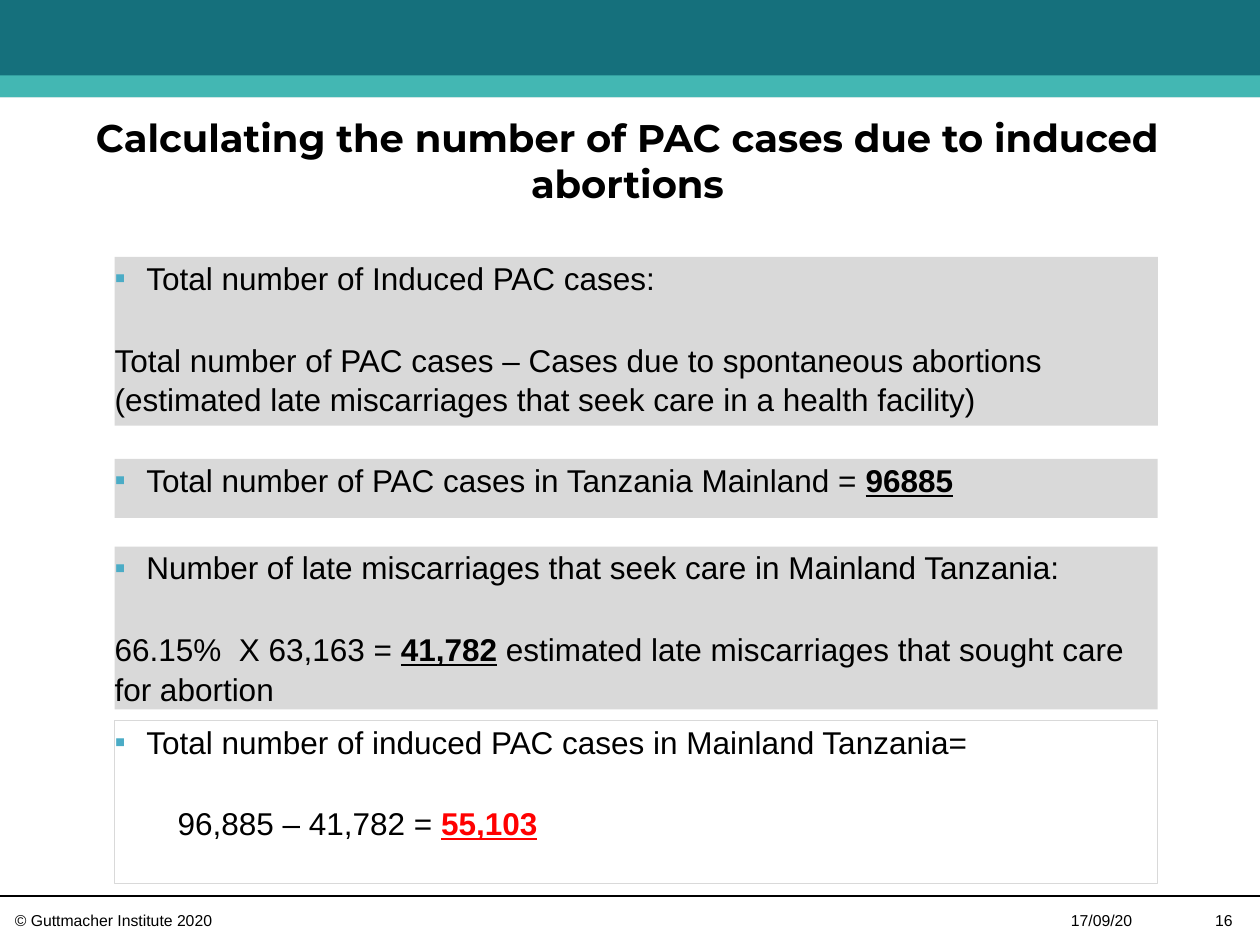
from pptx import Presentation
from pptx.dml.color import RGBColor
from pptx.enum.shapes import MSO_CONNECTOR, MSO_SHAPE
from pptx.enum.text import MSO_ANCHOR, MSO_AUTO_SIZE, PP_ALIGN
from pptx.oxml.ns import qn
from pptx.util import Cm, Pt
from lxml.etree import SubElement

INK = {"black": "000000", "red": "FF0000", "grey": "D9D9D9",
       "dark": "15707C", "light": "43B7B3", "mark": "4BACC6"}
TITLE = "Calculating the number of PAC cases due to induced abortions"
CARDS = [
    {"top": 5.18, "high": 3.4, "full": True, "indent": 0,
     "head": ["Total number of Induced PAC cases:"],
     "body": ["Total number of PAC cases – Cases due to spontaneous abortions "
              "(estimated late miscarriages that seek care in a health facility)"]},
    {"top": 9.25, "high": 1.19, "full": True, "indent": 0,
     "head": ["Total number of PAC cases in Tanzania Mainland = ", ("96885", "black")],
     "body": []},
    {"top": 11.02, "high": 3.28, "full": True, "indent": 0,
     "head": ["Number of late miscarriages that seek care in Mainland Tanzania:"],
     "body": ["66.15%  X 63,163 = ", ("41,782", "black"),
              " estimated late miscarriages that sought care for abortion"]},
    {"top": 14.53, "high": 3.28, "full": False, "indent": 1.27,
     "head": ["Total number of induced PAC cases in Mainland Tanzania="],
     "body": ["96,885 – 41,782 = ", ("55,103", "red")]},
]
BANDS = [(0, 1.96, "dark"), (1.52, 0.44, "light")]
NOTES = [
    ("© Guttmacher Institute 2020", 0.3, 5.2, PP_ALIGN.LEFT),
    ("17/09/20", 21.59, 1.8, PP_ALIGN.LEFT),
    ("16", 23.6, 1.25, PP_ALIGN.RIGHT),
]
WIDE, TALL = 25.4, 19.05
LEFT, SPAN = 2.31, 21.03


def tint(name):
    return RGBColor.from_string(INK[name])


def style(para, size, face="Arial", bold=None):
    font = para.font
    font.name, font.size, font.bold = face, Pt(size), bold
    font.color.rgb = tint("black")


def place(shape, left, top, wide, high):
    shape.left, shape.top = Cm(left), Cm(top)
    shape.width, shape.height = Cm(wide), Cm(high)


def setup(frame, anchor=MSO_ANCHOR.TOP):
    frame.word_wrap = True
    frame.auto_size = MSO_AUTO_SIZE.NONE
    frame.vertical_anchor = anchor
    frame.margin_left = frame.margin_right = 0
    frame.margin_top = frame.margin_bottom = 0


def write(para, parts, gap, indent, mark=False):
    props = para._p.get_or_add_pPr()
    props.set("marL", str(Cm(0.64 if mark else indent)))
    props.set("indent", str(Cm(-0.64 if mark else 0)))
    if mark:
        color = SubElement(props, qn("a:buClr"))
        SubElement(color, qn("a:srgbClr"), val=INK["mark"])
        SubElement(props, qn("a:buFont"), typeface="Arial")
        SubElement(props, qn("a:buChar"), char="▪")
    else:
        SubElement(props, qn("a:buNone"))
    para.alignment = PP_ALIGN.LEFT
    para.space_before = Pt(gap)
    para.line_spacing = 1.05
    style(para, 18)
    for part in parts:
        run = para.add_run()
        if isinstance(part, str):
            run.text = part
        else:
            run.text, color = part
            run.font.bold = run.font.underline = True
            run.font.color.rgb = tint(color)


def block(slide, top, high):
    shape = slide.shapes.add_shape(
        MSO_SHAPE.RECTANGLE, 0, Cm(top), Cm(WIDE), Cm(high))
    shape.shadow.inherit = False
    shape.line.fill.background()
    return shape


def card(shape, data):
    place(shape, LEFT, data["top"], SPAN, data["high"])
    if data["full"]:
        shape.fill.solid()
        shape.fill.fore_color.rgb = tint("grey")
    else:
        shape.fill.background()
        shape.line.color.rgb = tint("grey")
        shape.line.width = Pt(0.75)
    frame = shape.text_frame
    setup(frame)
    write(frame.paragraphs[0], data["head"], 0, 0, True)
    if data["body"]:
        write(frame.add_paragraph(), data["body"], 24, data["indent"])


def main():
    deck = Presentation()
    deck.slide_width, deck.slide_height = Cm(WIDE), Cm(TALL)
    slide = deck.slides.add_slide(deck.slide_layouts[1])

    for top, high, color in BANDS:
        band = block(slide, top, high)
        band.fill.solid()
        band.fill.fore_color.rgb = tint(color)

    title = slide.shapes.title
    place(title, 1.93, 2.26, 21.44, 1.9)
    setup(title.text_frame, MSO_ANCHOR.BOTTOM)
    title.text_frame.text = TITLE
    para = title.text_frame.paragraphs[0]
    para.alignment = PP_ALIGN.CENTER
    style(para, 22, "Montserrat", True)

    card(slide.placeholders[1], CARDS[0])
    for data in CARDS[1:]:
        card(block(slide, data["top"], data["high"]), data)

    rule = slide.shapes.add_connector(
        MSO_CONNECTOR.STRAIGHT, 0, Cm(18.06), Cm(WIDE), Cm(18.06))
    rule.line.color.rgb = tint("black")
    rule.line.width = Pt(0.75)
    SubElement(rule._element.spPr, qn("a:effectLst"))

    for text, left, wide, side in NOTES:
        note = slide.shapes.add_textbox(Cm(left), Cm(18.36), Cm(wide), Cm(0.39))
        setup(note.text_frame)
        para = note.text_frame.paragraphs[0]
        para.text, para.alignment = text, side
        style(para, 9)

    deck.save("out.pptx")


if __name__ == "__main__":
    main()
